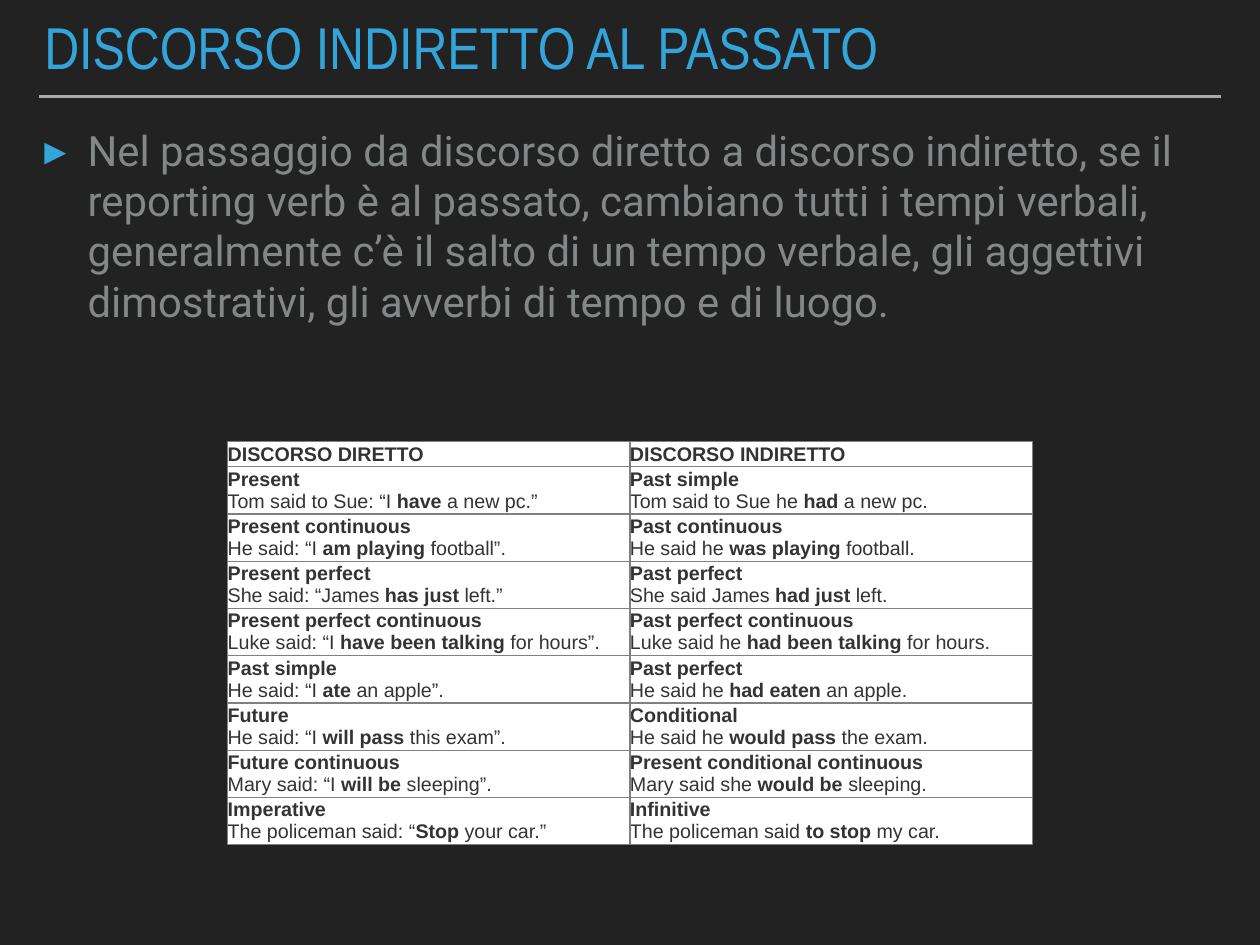
from pptx import Presentation
from pptx.dml.color import RGBColor as RGB
from pptx.enum.shapes import MSO_CONNECTOR as LINE
from pptx.enum.text import MSO_ANCHOR as ANCHOR
from pptx.oxml import parse_xml
from pptx.oxml.ns import nsdecls
from pptx.util import Inches, Pt


def paint(fill, color):
    fill.solid()
    fill.fore_color.rgb = RGB.from_string(color)


def write(par, text, size, font, color, bold=False):
    # Asterisks switch bold on and off
    for i, part in enumerate(text.split("*")):
        if part:
            run = par.add_run()
            run.text = part
            look = {"size": Pt(size), "name": font, "bold": bold or i % 2 == 1}
            for key, value in look.items():
                setattr(run.font, key, value)
            paint(run.font.fill, color)


deck = Presentation()
deck.slide_width, deck.slide_height = Inches(14.22), Inches(10.67)
slide = deck.slides.add_slide(deck.slide_layouts[6])
paint(slide.background.fill, "222222")

# Rule under the title
rule = slide.shapes.add_connector(
    LINE.STRAIGHT, Inches(0.44), Inches(1.09), Inches(13.78), Inches(1.09))
paint(rule.line.fill, "A6AAA9")
rule.line.width = Pt(2)
rule._element.spPr.append(parse_xml(f"<a:effectLst {nsdecls('a')}/>"))

# Title and body text
intro = ("Nel passaggio da discorso diretto a discorso indiretto, se il reporting verb "
         "è al passato, cambiano tutti i tempi verbali, generalmente c’è il salto di un "
         "tempo verbale, gli aggettivi dimostrativi, gli avverbi di tempo e di luogo.")
texts = [
    (0.18, 0.79, ANCHOR.BOTTOM, 0.8, "DISCORSO INDIRETTO AL PASSATO",
     48, "Arial Narrow", "34A5DA"),
    (1.35, 8.84, ANCHOR.TOP, 1.0, intro, 34, "Roboto", "838787"),
]
for top, height, anchor, space, text, size, font, color in texts:
    box = slide.shapes.add_textbox(Inches(0.44), Inches(top), Inches(13.33), Inches(height))
    frame = box.text_frame
    form = {"word_wrap": True, "vertical_anchor": anchor}
    for side in ("left", "right", "top", "bottom"):
        form[f"margin_{side}"] = Inches(0.06)
    for key, value in form.items():
        setattr(frame, key, value)
    par = frame.paragraphs[0]
    par.line_spacing = space
    write(par, text, size, font, color)

# Bullet on the body text
props = par._p.get_or_add_pPr()
props.set("marL", str(Inches(0.49)))
props.set("indent", str(-Inches(0.49)))
for mark in ('buClr {}><a:srgbClr val="34A5DA"/></a:buClr>', 'buSzPct {} val="105000"/>',
             'buFont {} typeface="Arial"/>', 'buChar {} char="▸"/>'):
    props.append(parse_xml("<a:" + mark.format(nsdecls("a"))))

# Table: each cell holds a tense and an example
rows = [
    (["DISCORSO DIRETTO"], ["DISCORSO INDIRETTO"]),
    (["Present", "Tom said to Sue: “I *have* a new pc.”"],
     ["Past simple", "Tom said to Sue he *had* a new pc."]),
    (["Present continuous", "He said: “I *am playing* football”."],
     ["Past continuous", "He said he *was playing* football."]),
    (["Present perfect", "She said: “James *has just* left.”"],
     ["Past perfect", "She said James *had just* left."]),
    (["Present perfect continuous", "Luke said: “I *have been talking* for hours”."],
     ["Past perfect continuous", "Luke said he *had been talking* for hours."]),
    (["Past simple", "He said: “I *ate* an apple”."],
     ["Past perfect", "He said he *had eaten* an apple."]),
    (["Future", "He said: “I *will pass* this exam”."],
     ["Conditional", "He said he *would pass* the exam."]),
    (["Future continuous", "Mary said: “I *will be* sleeping”."],
     ["Present conditional continuous", "Mary said she *would be *sleeping."]),
    (["Imperative", "The policeman said: “*Stop* your car.”"],
     ["Infinitive", "The policeman said *to stop* my car."]),
]
table = slide.shapes.add_table(
    len(rows), 2, Inches(2.57), Inches(4.99), Inches(9.08), Inches(2.52)).table
for r, row in enumerate(rows):
    table.rows[r].height = Inches(0.28)
    for c, lines in enumerate(row):
        cell = table.cell(r, c)
        cell.vertical_anchor = ANCHOR.MIDDLE
        for side in ("left", "right", "top", "bottom"):
            setattr(cell, f"margin_{side}", 0)
        for n, line in enumerate(lines):
            par = cell.text_frame.add_paragraph() if n else cell.text_frame.paragraphs[0]
            write(par, line, 16, "Arial", "333333", bold=n == 0)
        # Borders come before the fill
        for edge in ("lnL", "lnR", "lnT", "lnB"):
            cell._tc.get_or_add_tcPr().append(parse_xml(
                f'<a:{edge} {nsdecls("a")} w="12700"><a:solidFill>'
                f'<a:srgbClr val="808080"/></a:solidFill></a:{edge}>'))
        paint(cell.fill, "FFFFFF")

deck.save("out.pptx")
